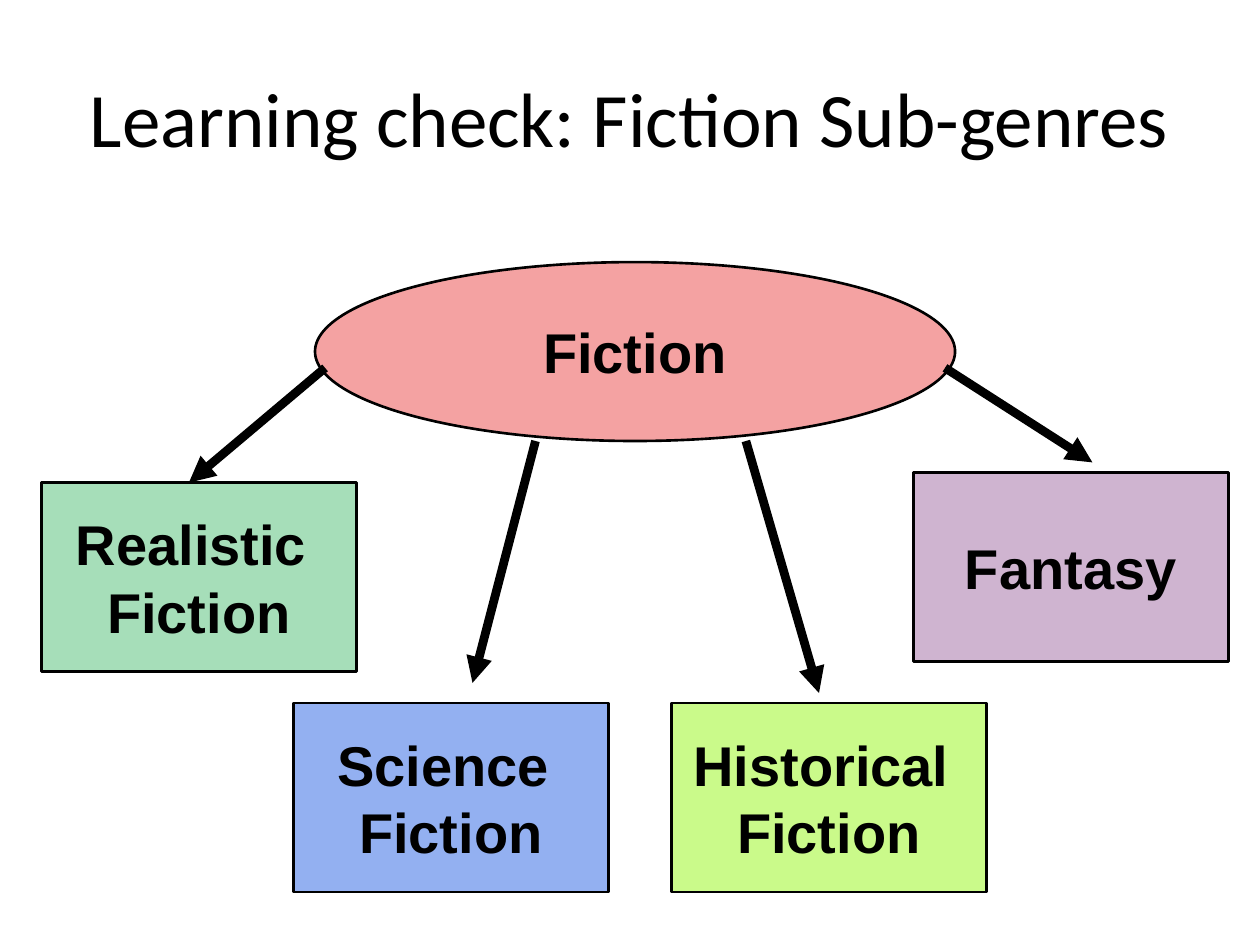
from lxml import etree
from pptx import Presentation
from pptx.dml.color import RGBColor
from pptx.enum import shapes, text
from pptx.oxml import ns
from pptx.util import Inches, Pt

BLACK = RGBColor(0x00, 0x00, 0x00)
ROSE = RGBColor(0xF4, 0xA2, 0xA2)
GREEN = RGBColor(0xA6, 0xDE, 0xB9)
BLUE = RGBColor(0x93, 0xB0, 0xF1)
LIME = RGBColor(0xCA, 0xFA, 0x8A)
MAUVE = RGBColor(0xCF, 0xB4, 0xD0)

RECT = shapes.MSO_SHAPE.RECTANGLE
OVAL = shapes.MSO_SHAPE.OVAL
SIZE = (2.5, 1.5)

# Sub-genre: words, left and top, fill, arrow start, arrow end
GENRES = [
    ("Realistic \nFiction", (0.33, 3.83), GREEN, (2.58, 2.92), (1.5, 3.83)),
    ("Science \nFiction", (2.33, 5.58), BLUE, (4.25, 3.5), (3.75, 5.42)),
    ("Historical \nFiction", (5.33, 5.58), LIME, (5.92, 3.5), (6.5, 5.5)),
    ("Fantasy", (7.25, 3.75), MAUVE, (7.5, 2.92), (8.67, 3.67)),
]


def write(shape, words, font, size, bold, wrap):
    frame = shape.text_frame
    frame.text = words
    frame.word_wrap = wrap
    frame.vertical_anchor = text.MSO_ANCHOR.MIDDLE
    for para in frame.paragraphs:
        para.alignment = text.PP_ALIGN.CENTER
        for run in para.runs:
            run.font.name = font
            run.font.size = Pt(size)
            run.font.bold = bold
            run.font.color.rgb = BLACK


def add_title(slide, box, words):
    label = slide.shapes.add_textbox(*map(Inches, box))
    write(label, words, "Calibri", 44, False, True)


def add_node(slide, kind, box, words, fill):
    node = slide.shapes.add_shape(kind, *map(Inches, box))
    node.shadow.inherit = False
    node.fill.solid()
    node.fill.fore_color.rgb = fill
    node.line.color.rgb = BLACK
    node.line.width = Pt(1.5)
    write(node, words, "Arial", 32, True, False)


def add_arrow(slide, start, end):
    line = slide.shapes.add_connector(
        shapes.MSO_CONNECTOR.STRAIGHT, *map(Inches, start + end))
    line.line.color.rgb = BLACK
    line.line.width = Pt(5)
    # Arrowhead, and no shadow
    head = etree.SubElement(line.line._get_or_add_ln(), ns.qn("a:tailEnd"))
    head.set("type", "triangle")
    etree.SubElement(line._element.spPr, ns.qn("a:effectLst"))


def main():
    deck = Presentation()
    deck.slide_width, deck.slide_height = Inches(10), Inches(7.5)
    slide = deck.slides.add_slide(deck.slide_layouts[6])

    add_title(slide, (0.5, 0.3, 9, 1.25), "Learning check: Fiction Sub-genres")

    # Main genre, then its sub-genres
    add_node(slide, OVAL, (2.5, 2.08, 5.08, 1.42), "Fiction", ROSE)
    for words, spot, fill, _, _ in GENRES:
        add_node(slide, RECT, spot + SIZE, words, fill)

    # Arrows lie on top of the nodes
    for *_, start, end in GENRES:
        add_arrow(slide, start, end)

    deck.save("out.pptx")


if __name__ == "__main__":
    main()
